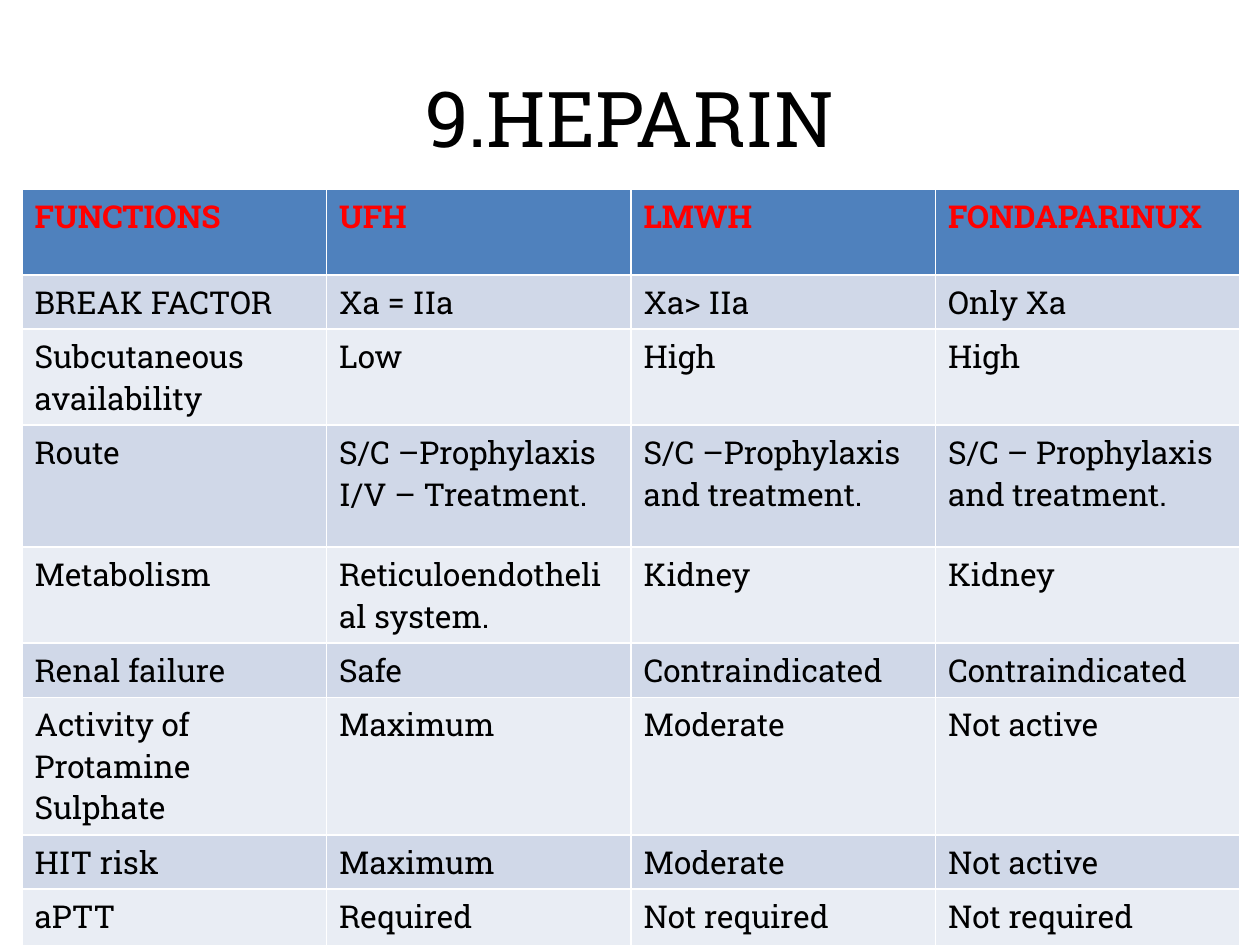
from pptx import Presentation
from pptx.dml.color import RGBColor
from pptx.enum.text import MSO_ANCHOR, PP_ALIGN
from pptx.util import Pt

MIDDLE = MSO_ANCHOR.MIDDLE
CENTER = PP_ALIGN.CENTER

EMU_PER_PX = 914400 // 126
FONT = "Roboto Slab"
BLACK, RED = "000000", "FF0000"
HEADER_FILL = "4F81BD"
BAND_FILLS = ("D0D8E8", "E9EDF4")

TITLE = "9.HEPARIN"
TITLE_BOX = (63, 38, 1134, 157)
TABLE_LEFT, TABLE_TOP, COLUMN_WIDTH = 22, 189, 304.5

# Row height in px, then the cells; a line break starts a new paragraph.
ROWS = [
    (86, ("FUNCTIONS", "UFH", "LMWH", "FONDAPARINUX")),
    (49, ("BREAK FACTOR", "Xa = IIa", "Xa> IIa", "Only Xa")),
    (86, ("Subcutaneous availability", "Low", "High", "High")),
    (122, ("Route", "S/C –Prophylaxis\nI/V – Treatment.",
           "S/C –Prophylaxis and treatment.", "S/C – Prophylaxis and treatment.")),
    (86, ("Metabolism", "Reticuloendothelial system.", "Kidney", "Kidney")),
    (49, ("Renal failure", "Safe", "Contraindicated", "Contraindicated")),
    (122, ("Activity of Protamine Sulphate", "Maximum", "Moderate", "Not active")),
    (49, ("HIT risk", "Maximum", "Moderate", "Not active")),
    (57, ("aPTT", "Required", "Not required", "Not required")),
]


def px(length):
    return round(length * EMU_PER_PX)


def color(hex_string):
    return RGBColor.from_string(hex_string)


def write(text_frame, text, size, text_color, bold=False):
    text_frame.text = text
    for paragraph in text_frame.paragraphs:
        paragraph.font.name = FONT
        paragraph.font.size = Pt(size)
        paragraph.font.bold = bold
        paragraph.font.color.rgb = color(text_color)


def add_title(slide):
    title = slide.shapes.title
    title.left, title.top, title.width, title.height = map(px, TITLE_BOX)
    write(title.text_frame, TITLE, 44, BLACK)
    title.text_frame.vertical_anchor = MIDDLE
    title.text_frame.paragraphs[0].alignment = CENTER


def add_comparison_table(slide):
    column_count = len(ROWS[0][1])
    total_height = sum(height for height, _ in ROWS)
    table = slide.shapes.add_table(
        len(ROWS), column_count, px(TABLE_LEFT), px(TABLE_TOP),
        px(COLUMN_WIDTH * column_count), px(total_height)).table
    for column in table.columns:
        column.width = px(COLUMN_WIDTH)
    for row_index, (height, texts) in enumerate(ROWS):
        is_header = row_index == 0
        fill = HEADER_FILL if is_header else BAND_FILLS[(row_index - 1) % 2]
        table.rows[row_index].height = px(height)
        for column_index, text in enumerate(texts):
            cell = table.cell(row_index, column_index)
            cell.fill.solid()
            cell.fill.fore_color.rgb = color(fill)
            write(cell.text_frame, text, 18, RED if is_header else BLACK, is_header)


def main():
    presentation = Presentation()
    presentation.slide_width, presentation.slide_height = px(1260), px(945)
    slide = presentation.slides.add_slide(presentation.slide_layouts[5])
    add_title(slide)
    add_comparison_table(slide)
    presentation.save("out.pptx")


if __name__ == "__main__":
    main()
